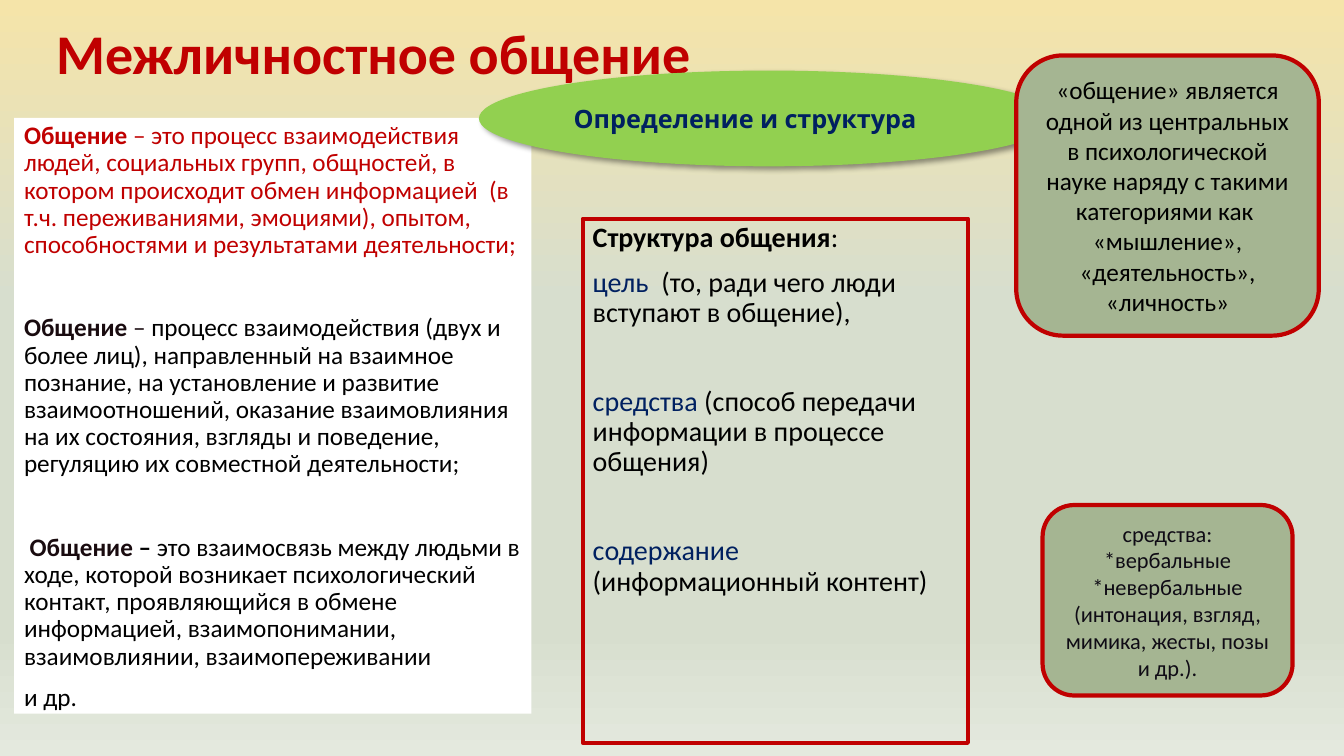
from lxml.etree import SubElement
from pptx import Presentation
from pptx.dml.color import RGBColor
from pptx.enum.shapes import MSO_SHAPE
from pptx.enum.text import MSO_ANCHOR, PP_ALIGN
from pptx.oxml.ns import qn
from pptx.util import Inches, Pt

COLORS = {
    "red": "C00000", "black": "000000", "ink": "190B0F", "dark": "0F0B15",
    "navy": "002060", "white": "FFFFFF", "lime": "92D050", "sage": "A5B592",
}
BACKGROUND_STOPS = [(0, "F5E4A9"), (40, "D7DECE"), (83, "D7DECE"), (100, "E4E9DE")]


def color(name):
    return RGBColor.from_string(COLORS[name])


def add_text_shape(kind, box, paragraphs, size, fill=None, line=None, font="Calibri",
                   anchor=MSO_ANCHOR.MIDDLE, align=PP_ALIGN.LEFT, spacing=1.0):
    """Each paragraph is (space before, [(text, color, bold), ...])."""
    shape = slide.shapes.add_shape(kind, *[Inches(length) for length in box])
    shape.shadow.inherit = False
    if fill:
        shape.fill.solid()
        shape.fill.fore_color.rgb = color(fill)
    else:
        shape.fill.background()
    if line:
        shape.line.color.rgb = color(line)
        shape.line.width = Pt(3)
    else:
        shape.line.fill.background()
    frame = shape.text_frame
    frame.word_wrap = True
    frame.vertical_anchor = anchor
    for index, (space_before, runs) in enumerate(paragraphs):
        paragraph = frame.add_paragraph() if index else frame.paragraphs[0]
        paragraph.alignment = align
        paragraph.line_spacing = spacing
        paragraph.space_before = Pt(space_before)
        for text, run_color, bold in runs:
            run = paragraph.add_run()
            run.text = text
            run.font.name = font
            run.font.size = Pt(size)
            run.font.bold = bold
            run.font.color.rgb = color(run_color)
    return shape


presentation = Presentation()
presentation.slide_width = Inches(13.33)
presentation.slide_height = Inches(7.5)
slide = presentation.slides.add_slide(presentation.slide_layouts[6])

# Background gradient, top to bottom
background = slide.background.fill
background.gradient()
background.gradient_angle = 270
stop_list = next(slide.element.iter(qn("a:gsLst")))
for stop in list(stop_list):
    stop_list.remove(stop)
for position, stop_color in BACKGROUND_STOPS:
    stop = SubElement(stop_list, qn("a:gs"), pos=str(position * 1000))
    SubElement(stop, qn("a:srgbClr"), val=stop_color)

# Title
add_text_shape(MSO_SHAPE.RECTANGLE, (0.46, 0.08, 9, 0.95),
               [(0, [("Межличностное общение", "red", True)])], 40, spacing=0.9)

# Definitions
definitions = [
    (0, [("Общение ", "red", True),
         ("– это процесс взаимодействия людей, социальных групп, общностей, в котором "
          "происходит обмен информацией  (в т.ч. переживаниями, эмоциями), опытом, "
          "способностями и результатами деятельности;", "red", False)]),
    (40, [("Общение ", "ink", True), ("– ", "ink", False),
          ("процесс взаимодействия (двух и более лиц), направленный на взаимное познание, "
           "на установление и развитие взаимоотношений, оказание взаимовлияния на их "
           "состояния, взгляды и поведение, регуляцию их совместной деятельности;",
           "black", False)]),
    (40, [(" Общение ", "ink", True), ("–", "black", True),
          (" это взаимосвязь между людьми в ходе, которой возникает психологический "
           "контакт, проявляющийся в обмене информацией, взаимопонимании, "
           "взаимовлиянии, взаимопереживании", "black", False)]),
    (10, [("и др.", "black", False)]),
]
add_text_shape(MSO_SHAPE.RECTANGLE, (0.14, 1.17, 5.13, 5.91), definitions, 18,
               fill="white", anchor=MSO_ANCHOR.TOP, spacing=0.9)

# Structure of communication
structure = [(0, [("Структура общения", "black", True), (":", "black", False)])]
for space_before, term, explanation in [
    (10, "цель  ", "(то, ради чего люди вступают в общение),"),
    (42, "средства ", "(способ передачи информации в процессе общения)"),
    (42, "содержание ", "(информационный контент)"),
]:
    structure.append((space_before, [(term, "navy", False), (explanation, "black", False)]))
add_text_shape(MSO_SHAPE.RECTANGLE, (5.78, 2.17, 3.82, 5.2), structure, 20,
               line="red", anchor=MSO_ANCHOR.TOP, spacing=0.9)

# Heading ellipse with its shadow
ellipse = add_text_shape(MSO_SHAPE.OVAL, (4.75, 0.7, 5.75, 0.95),
                         [(0, [("Определение и структура", "navy", True)])], 18,
                         fill="lime", font="Karla")
effects = next(ellipse.element.iter(qn("a:effectLst")))
shadow = SubElement(effects, qn("a:outerShdw"), blurRad=str(Pt(4)), dist=str(Pt(3)),
                    dir=str(45 * 60000), algn="tl", rotWithShape="0")
shadow_color = SubElement(shadow, qn("a:srgbClr"), val=COLORS["black"])
SubElement(shadow_color, qn("a:alpha"), val="40000")

# Rounded notes
notes = [
    ((10.34, 5.01, 2.48, 1.89), 16, "dark",
     ["средства:", "*вербальные *невербальные (интонация, взгляд, мимика, жесты, позы и др.)."]),
    ((10.08, 0.55, 3, 2.78), 18, "black",
     ["«общение» является одной из центральных в психологической науке наряду с такими "
      "категориями как  «мышление», «деятельность», «личность»"]),
]
for box, size, text_color, lines in notes:
    add_text_shape(MSO_SHAPE.ROUNDED_RECTANGLE, box,
                   [(0, [(text, text_color, False)]) for text in lines], size,
                   fill="sage", line="red", align=PP_ALIGN.CENTER)

presentation.save("out.pptx")
